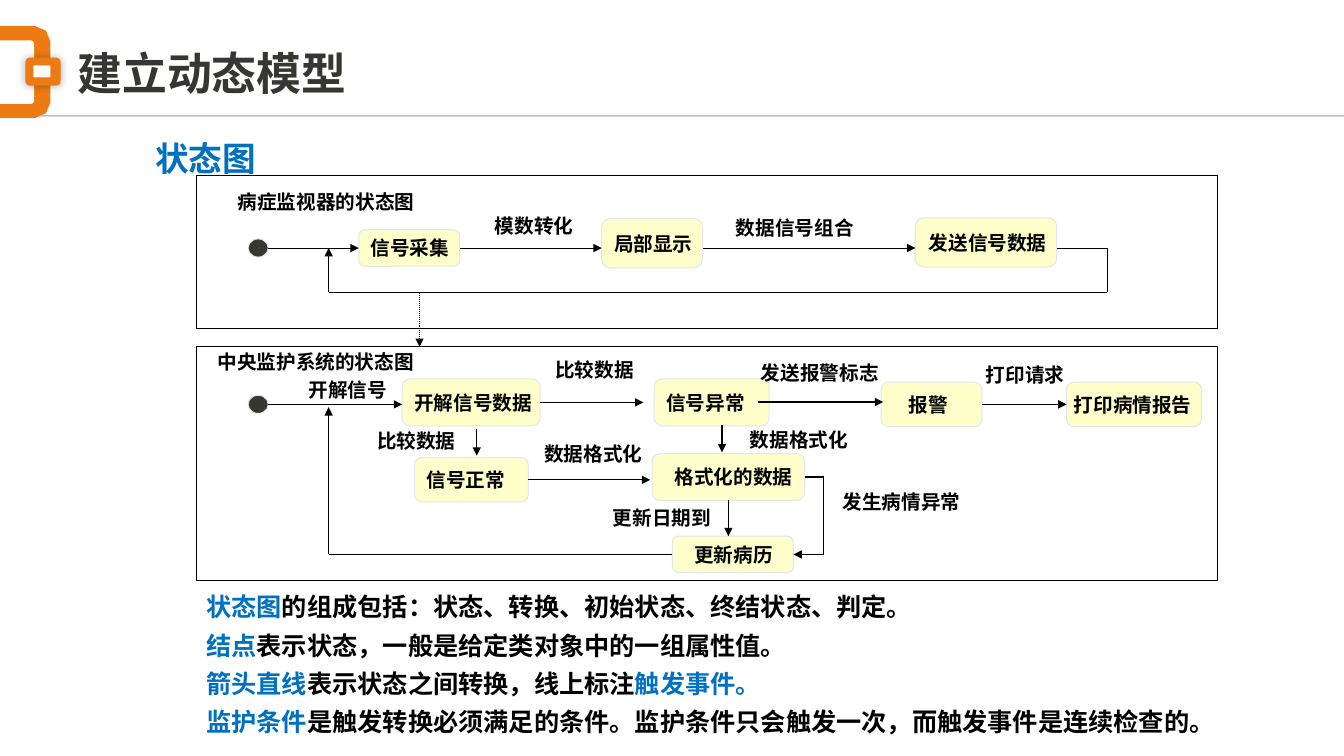
from lxml import etree
from pptx import Presentation
from pptx.dml.color import RGBColor
from pptx.enum.dml import MSO_LINE
from pptx.enum.shapes import MSO_CONNECTOR, MSO_SHAPE
from pptx.enum.text import MSO_ANCHOR, PP_ALIGN
from pptx.oxml import parse_xml
from pptx.oxml.ns import qn
from pptx.util import Cm, Pt

STRAIGHT = MSO_CONNECTOR.STRAIGHT
RECTANGLE, ROUNDED, OVAL = MSO_SHAPE.RECTANGLE, MSO_SHAPE.ROUNDED_RECTANGLE, MSO_SHAPE.OVAL
MIDDLE, LEFT = MSO_ANCHOR.MIDDLE, PP_ALIGN.LEFT
BOTTOM_SIDE, LEFT_SIDE, RIGHT_SIDE = 2, 1, 3
BLACK, DARK, GREY, WHITE = "000000", "363632", "E7E6E6", "FFFFFF"
ORANGE, BLUE, YELLOW = "EE7A13", "0070C0", "FFFFCC"
CJK_FONT = "Noto Sans CJK SC"

deck = Presentation()
deck.slide_width, deck.slide_height = Cm(33.86), Cm(19.05)
page = deck.slides.add_slide(deck.slide_layouts[5])
shapes = page.shapes


def add_span(para, text, size, color, font="Arial"):
    span = para.add_run()
    span.text = text
    span.font.size, span.font.bold, span.font.name = Pt(size), True, font
    span.font.color.rgb = RGBColor.from_string(color)
    etree.SubElement(span.font._element, qn("a:ea"), typeface=CJK_FONT)


def paint(shape, fill=None, line=None):
    """Set flat fill and outline colours; None means no paint."""
    shape.shadow.inherit = False
    if fill:
        shape.fill.solid()
        shape.fill.fore_color.rgb = RGBColor.from_string(fill)
    else:
        shape.fill.background()
    if line:
        shape.line.color.rgb = RGBColor.from_string(line)
        shape.line.width = Pt(0.75)
    else:
        shape.line.fill.background()


# Header rule and ornament
rule = shapes.add_connector(STRAIGHT, Cm(0.64), Cm(2.92), Cm(33.86), Cm(2.92))
rule.line.width = Pt(1)
rule.line.color.rgb = RGBColor.from_string(DARK)
rule_color = rule.line._ln.find(".//" + qn("a:srgbClr"))
etree.SubElement(rule_color, qn("a:alpha"), val="31000")
etree.SubElement(rule._element.spPr, qn("a:effectLst"))

# right edge, top, bottom, corner radius, colour
for right, top, bottom, radius, color in [
    (1.27, 0.66, 2.97, 0.38, ORANGE),
    (0.86, 1.02, 2.62, 0.08, WHITE),
]:
    builder = shapes.build_freeform(Cm(0), Cm(top), scale=1.0)
    bend = radius * 0.3
    builder.add_line_segments([(Cm(x), Cm(y)) for x, y in [
        (right - radius, top), (right - bend, top + bend), (right, top + radius),
        (right, bottom - radius), (right - bend, bottom - bend),
        (right - radius, bottom), (0, bottom),
    ]])
    paint(builder.convert_to_shape(), color)

clasp = shapes.add_shape(ROUNDED, Cm(0.64), Cm(1.45), Cm(0.89), Cm(0.71))
paint(clasp, ORANGE)
clasp._element.spPr.find(qn("a:effectLst")).append(parse_xml(
    '<a:outerShdw xmlns:a="http://schemas.openxmlformats.org/drawingml/2006/main" '
    'blurRad="76200" dist="0" algn="ctr" rotWithShape="0">'
    '<a:srgbClr val="000000"><a:alpha val="30000"/></a:srgbClr></a:outerShdw>'))
clasp_hole = shapes.add_shape(ROUNDED, Cm(0.84), Cm(1.65), Cm(0.43), Cm(0.3))
clasp_hole.adjustments[0] = 0.1
paint(clasp_hole, WHITE)

title = shapes.title
title.left, title.top, title.width, title.height = Cm(1.7), Cm(1.02), Cm(30.23), Cm(1.63)
title.text_frame.vertical_anchor = MIDDLE
title.text_frame.paragraphs[0].alignment = LEFT
add_span(title.text_frame.paragraphs[0], "建立动态模型", 32, DARK)

# Diagram panels and initial states
for top, height in [(4.42, 3.86), (8.74, 5.89)]:
    paint(shapes.add_shape(RECTANGLE, Cm(4.95), Cm(top), Cm(25.73), Cm(height)), None, BLACK)
for top in (6.02, 9.96):
    paint(shapes.add_shape(OVAL, Cm(6.25), Cm(top), Cm(0.51), Cm(0.46)), DARK, GREY)

# name, left, top, width, height, text inset
states = {}
for name, left, top, width, height, inset in [
    ("信号采集", 9.04, 5.79, 2.54, 0.92, 0.25),
    ("局部显示", 15.16, 5.51, 2.54, 1.24, 0.25),
    ("发送信号数据", 23.06, 5.49, 3.56, 1.24, 0.28),
    ("开解信号数据", 10.13, 9.55, 3.48, 1.18, 0.25),
    ("信号异常", 16.48, 9.55, 2.9, 1.18, 0.25),
    ("信号正常", 10.44, 11.53, 2.87, 1.12, 0.25),
    ("报警", 22.2, 9.63, 2.54, 1.12, 0.64),
    ("打印病情报告", 26.87, 9.63, 3.4, 1.12, 0.13),
    ("格式化的数据", 16.43, 11.43, 3.84, 1.18, 0.51),
    ("更新病历", 16.94, 13.51, 3.05, 0.92, 0.51),
]:
    state = shapes.add_shape(ROUNDED, Cm(left), Cm(top), Cm(width), Cm(height))
    paint(state, YELLOW, GREY)
    frame = state.text_frame
    frame.margin_left, frame.margin_right = Cm(inset), Cm(0)
    frame.margin_top = frame.margin_bottom = Cm(0)
    frame.vertical_anchor = MIDDLE
    frame.paragraphs[0].alignment = LEFT
    add_span(frame.paragraphs[0], name, 14, BLACK, CJK_FONT)
    states[name] = state

# Transitions: corner points, then the joined (state, side) at each end
trigger = [(10.57, 7.37), (10.57, 8.74)]
for points, source, target in [
    ([(6.76, 6.25), (9.04, 6.25)], None, ("信号采集", LEFT_SIDE)),
    ([(11.58, 6.25), (15.16, 6.25)], ("信号采集", RIGHT_SIDE), None),
    ([(17.7, 6.25), (23.06, 6.25)], None, None),
    ([(26.62, 6.25), (27.89, 6.25), (27.89, 7.37), (8.28, 7.37), (8.28, 6.25)], None, None),
    (trigger, None, None),
    ([(6.76, 10.19), (10.13, 10.19)], None, None),
    ([(13.61, 10.14), (16.21, 10.14)], ("开解信号数据", RIGHT_SIDE), None),
    ([(12.01, 10.8), (12.01, 11.48)], None, None),
    ([(13.31, 12.09), (16.38, 12.09)], ("信号正常", RIGHT_SIDE), None),
    ([(18.19, 10.72), (18.19, 11.4)], None, None),
    ([(19.1, 10.13), (22.25, 10.13)], None, None),
    ([(24.74, 10.19), (26.87, 10.19)], ("报警", RIGHT_SIDE), ("打印病情报告", LEFT_SIDE)),
    ([(18.35, 12.61), (18.35, 13.51)], ("格式化的数据", BOTTOM_SIDE), None),
    ([(20.27, 12.02), (20.75, 12.02), (20.75, 13.97), (19.99, 13.97)],
     ("格式化的数据", RIGHT_SIDE), ("更新病历", RIGHT_SIDE)),
    ([(16.94, 13.97), (8.28, 13.97), (8.28, 10.26)], ("更新病历", LEFT_SIDE), None),
]:
    last = len(points) - 2
    for index, (start, end) in enumerate(zip(points, points[1:])):
        link = shapes.add_connector(STRAIGHT, *map(Cm, start + end))
        link.line.width = Pt(0.75)
        link.line.color.rgb = RGBColor.from_string(BLACK)
        if points is trigger:
            link.line.dash_style = MSO_LINE.ROUND_DOT
        if index == 0 and source:
            link.begin_connect(states[source[0]], source[1])
        if index == last:
            etree.SubElement(link.line._ln, qn("a:tailEnd"), type="triangle")
            if target:
                link.end_connect(states[target[0]], target[1])
        etree.SubElement(link._element.spPr, qn("a:effectLst"))

# Labels: text, left, top, size, font, colour
for text, left, top, size, font, color in [
    ("状态图", 3.66, 3.25, 24, "Arial", BLUE),
    *[(*label, 14, CJK_FONT, BLACK) for label in [
        ("病症监视器的状态图", 5.74, 4.65),
        ("模数转化", 12.22, 5.26),
        ("数据信号组合", 18.29, 5.31),
        ("中央监护系统的状态图", 5.23, 8.69),
        ("开解信号", 7.52, 9.4),
        ("比较数据", 13.74, 8.89),
        ("比较数据", 9.25, 10.67),
        ("发送报警标志", 18.92, 8.97),
        ("打印请求", 24.59, 9.02),
        ("数据格式化", 13.46, 11),
        ("数据格式化", 18.64, 10.64),
        ("更新日期到", 15.19, 12.62),
        ("发生病情异常", 20.98, 12.22),
    ]],
]:
    width, height = (0.6 * len(text) + 1) * size / 14, 0.86 * size / 14
    box = shapes.add_textbox(Cm(left), Cm(top), Cm(width), Cm(height))
    box.text_frame.word_wrap = True
    box.text_frame.vertical_anchor = MIDDLE
    add_span(box.text_frame.paragraphs[0], text, size, color, font)

# Explanation below the diagram
notes = shapes.add_textbox(Cm(4.95), Cm(14.78), Cm(26.62), Cm(3.99)).text_frame
notes.word_wrap = True
for index, spans in enumerate([
    [("状态图", BLUE), ("的组成包括：状态、转换、初始状态、终结状态、判定。", BLACK)],
    [("结点", BLUE), ("表示状态，一般是给定类对象中的一组属性值。", BLACK)],
    [("箭头直线", BLUE), ("表示状态之间转换，线上标注", BLACK), ("触发事件。", BLUE)],
    [("监护条件", BLUE),
     ("是触发转换必须满足的条件。监护条件只会触发一次，而触发事件是连续检查的。", BLACK)],
]):
    para = notes.add_paragraph() if index else notes.paragraphs[0]
    para.line_spacing = Pt(21.5)
    para.space_before = Pt(6 if index else 0)
    for text, color in spans:
        add_span(para, text, 18, color)

deck.save("out.pptx")
